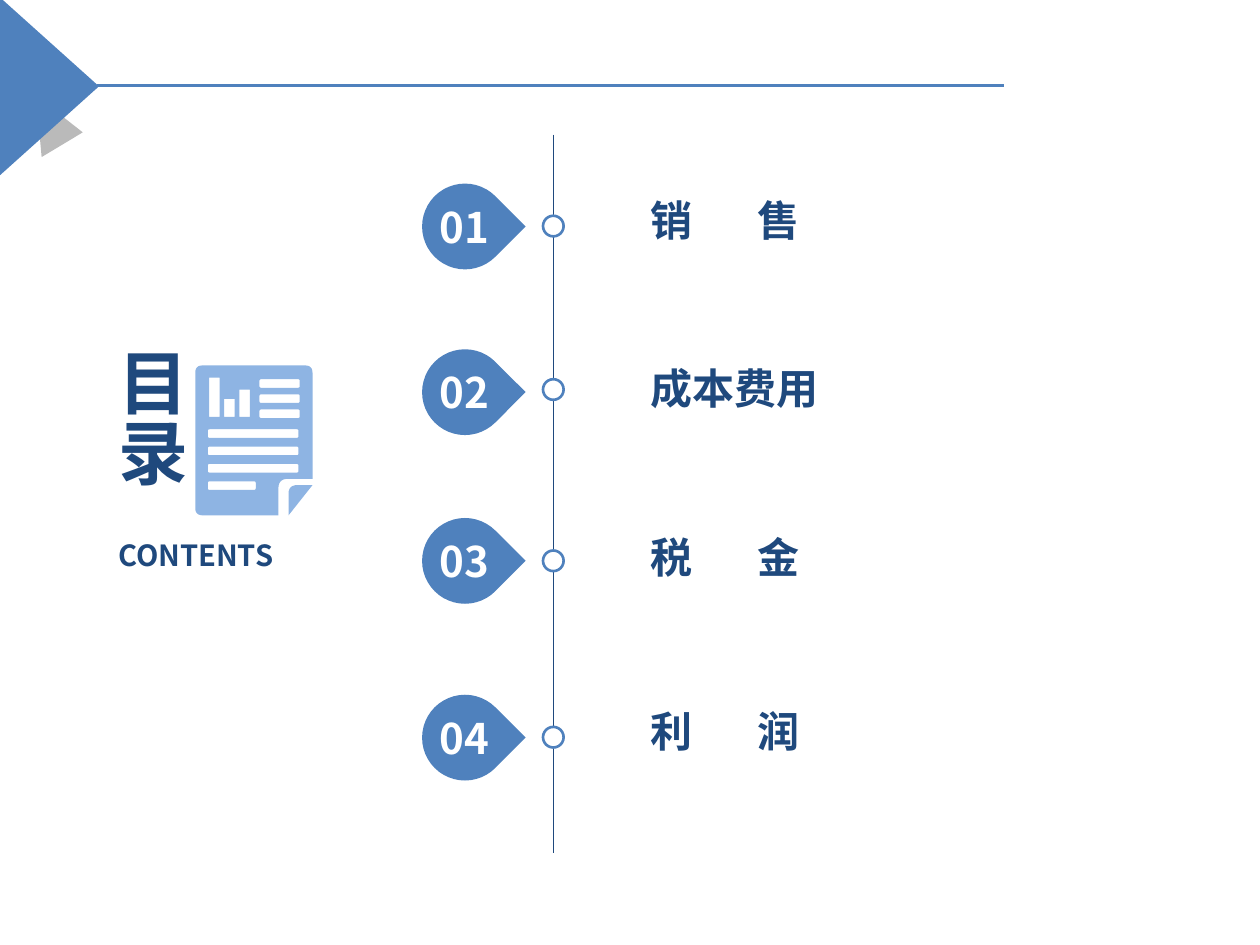
"""Build the contents slide with a numbered timeline of four sections."""
from dataclasses import dataclass

from lxml.etree import SubElement
from pptx import Presentation
from pptx.dml.color import RGBColor
from pptx.enum.shapes import MSO_CONNECTOR as Connector, MSO_SHAPE as Shape
from pptx.enum.text import MSO_ANCHOR as Anchor, MSO_AUTO_SIZE as AutoSize, PP_ALIGN as Align
from pptx.oxml.ns import qn
from pptx.util import Pt


def color(value):
    """Turn a hex string into a colour."""
    return RGBColor.from_string(value)


def rounded(corners, steps=6):
    """Return polygon points with each (x, y, radius) corner curved."""
    points = []
    for index, (x, y, radius) in enumerate(corners):
        if not radius:
            points.append((x, y))
            continue
        ends = []
        for near_x, near_y, _ in (corners[index - 1], corners[(index + 1) % len(corners)]):
            part = radius / max(abs(near_x - x), abs(near_y - y))
            ends.append((x + (near_x - x) * part, y + (near_y - y) * part))
        (start_x, start_y), (end_x, end_y) = ends
        for step in range(steps + 1):
            t = step / steps
            a, b, c = (1 - t) ** 2, 2 * t * (1 - t), t ** 2
            points.append((a * start_x + b * x + c * end_x, a * start_y + b * y + c * end_y))
    return points


def slot(left, top, width, height, radius=0):
    """Return the outline of a rectangle with rounded corners."""
    right, bottom = left + width, top + height
    return rounded([(left, top, radius), (right, top, radius),
                    (right, bottom, radius), (left, bottom, radius)])


@dataclass
class Painter:
    """Hold the style and draw elements on the current slide."""
    page: object
    font: str = "Noto Sans CJK SC"
    blue: str = "4F81BD"
    navy: str = "1F497D"
    pale: str = "8EB4E3"
    grey: str = "404040"
    paper: str = "FFFFFF"

    def set_text(self, holder, text, size, ink, align=Align.LEFT, anchor=Anchor.MIDDLE, wrap=True, tab=None):
        """Put one styled paragraph into a shape."""
        frame = holder.text_frame
        frame.text = text
        frame.auto_size = AutoSize.NONE
        frame.word_wrap = wrap
        frame.vertical_anchor = anchor
        frame.margin_left = frame.margin_right = frame.margin_top = frame.margin_bottom = 0
        para = frame.paragraphs[0]
        para.alignment = align
        if tab:
            stops = SubElement(para._p.get_or_add_pPr(), qn("a:tabLst"))
            SubElement(stops, qn("a:tab"), pos=str(Pt(tab)), algn="l")
        for span in para.runs:
            span.font.size = Pt(size)
            span.font.bold = True
            span.font.color.rgb = color(ink)
            span.font.name = self.font
            SubElement(span.font._element, qn("a:ea"), typeface=self.font)
        return para

    def title(self, text, left, top, width, height, size):
        """Place and format the title placeholder."""
        box = self.page.shapes.title
        box.left, box.top, box.width, box.height = map(Pt, (left, top, width, height))
        para = self.set_text(box, text, size, self.navy, Align.CENTER, Anchor.TOP)
        para.line_spacing = 0.83

    def label(self, text, left, top, width, height, size, **options):
        """Add a text box."""
        box = self.page.shapes.add_textbox(*map(Pt, (left, top, width, height)))
        self.set_text(box, text, size, self.navy, **options)

    def shape(self, kind, left, top, width, height, fill=None, line=None, turn=0, peak=None, alpha=None):
        """Add a preset shape."""
        item = self.page.shapes.add_shape(kind, *map(Pt, (left, top, width, height)))
        item.shadow.inherit = False
        item.rotation = turn
        if peak is not None:
            item.adjustments[0] = peak
        if fill:
            item.fill.solid()
            item.fill.fore_color.rgb = color(fill)
        else:
            item.fill.background()
        if alpha:
            tone = item._element.spPr.find(qn("a:solidFill"))[0]
            SubElement(tone, qn("a:alpha"), val=str(alpha * 1000))
        if line:
            item.line.color.rgb = color(line)
            item.line.width = Pt(1.5)
        else:
            item.line.fill.background()
        return item

    def line(self, start, end, ink, weight):
        """Add a straight line."""
        rule = self.page.shapes.add_connector(Connector.STRAIGHT, *map(Pt, start + end))
        rule.line.color.rgb = color(ink)
        rule.line.width = Pt(weight)
        SubElement(rule._element.spPr, qn("a:effectLst"))

    def outline(self, contours, fill):
        """Add one freeform made of several closed contours."""
        grain = 100
        builder = None
        for points in contours:
            first, *rest = [(round(x * grain), round(y * grain)) for x, y in points]
            if builder is None:
                builder = self.page.shapes.build_freeform(*first, scale=Pt(1) / grain)
            else:
                builder.move_to(*first)
            builder.add_line_segments(rest, close=True)
        item = builder.convert_to_shape()
        item.shadow.inherit = False
        item.fill.solid()
        item.fill.fore_color.rgb = color(fill)
        item.line.fill.background()

    def report_icon(self):
        """Draw the report sheet with its bars, text lines and folded corner."""
        left, top, right, bottom = 111.6, 208.8, 178.6, 294.5
        sheet = rounded([(left, top, 4.3), (right, top, 4.3), (right, 273.6, 0),
                         (159.1, 273.6, 5.5), (159.1, bottom, 0), (left, bottom, 4.3)])
        fold = rounded([(right, 277.2, 0), (164.9, 277.2, 5), (164.9, bottom, 0)])
        bars = [slot(119.5 + 8.64 * index, 238.3 - height, 6, height)
                for index, height in enumerate((22.5, 10.3, 15.7))]
        notes = [slot(148.3, 216.7 + 8.65 * index, 23, 4.9, 1) for index in range(3)]
        lines = [slot(118.8, 245.3 + 9.92 * index, width, 4.9, 1)
                 for index, width in enumerate((51.8, 51.8, 51.8, 27.4))]
        self.outline([sheet, fold, *bars, *notes, *lines], self.pale)

    def section(self, number, text, ring_top, drop_top, label_box):
        """Draw one numbered stop on the timeline with its label."""
        self.shape(Shape.OVAL, 310.3, ring_top, 11.8, 11.8, self.paper, self.blue)
        self.shape(Shape.TEAR, 241.2, drop_top, 49, 49, self.blue, turn=44.9)
        disc = self.shape(Shape.OVAL, 242, drop_top + 1, 47, 47)
        self.set_text(disc, f"{number:02}", 24, self.paper, Align.CENTER, wrap=False)
        self.label(text, 371.5, *label_box, 24, anchor=Anchor.BOTTOM, tab=61.5)


def main():
    """Build and save the deck."""
    deck = Presentation()
    deck.slide_width, deck.slide_height = Pt(720), Pt(540)
    page = deck.slides.add_slide(deck.slide_layouts[5])
    painter = Painter(page)
    page.background.fill.solid()
    page.background.fill.fore_color.rgb = color(painter.paper)

    painter.shape(Shape.ISOSCELES_TRIANGLE, 13.7, 53.3, 27.4, 31.7, painter.grey,
                  turn=329, peak=0.56, alpha=36)
    painter.shape(Shape.ISOSCELES_TRIANGLE, -23, 20.9, 102.2, 56.9, painter.blue, turn=90)
    painter.line((55.4, 49), (573.8, 49), painter.blue, 2)

    painter.title("目录", 67.7, 202.3, 35.3, 99.4, 40)
    painter.label("CONTENTS", 67.7, 307.4, 110.9, 19.4, 16.6, align=Align.JUSTIFY)
    painter.report_icon()

    painter.line((316.5, 77), (316.5, 487.4), painter.navy, 0.75)
    sections = [
        ("销\t售", 123.3, 104.9, (125.3, 99.4, 14.4)),
        ("成本费用", 216.7, 199.6, (221.8, 99.4, 14.4)),
        ("税\t金", 314.6, 296, (298.1, 146.9, 34.6)),
        ("利\t润", 415.4, 397, (417.6, 99.4, 14.4)),
    ]
    for number, section in enumerate(sections, 1):
        painter.section(number, *section)
    deck.save("out.pptx")


if __name__ == "__main__":
    main()
